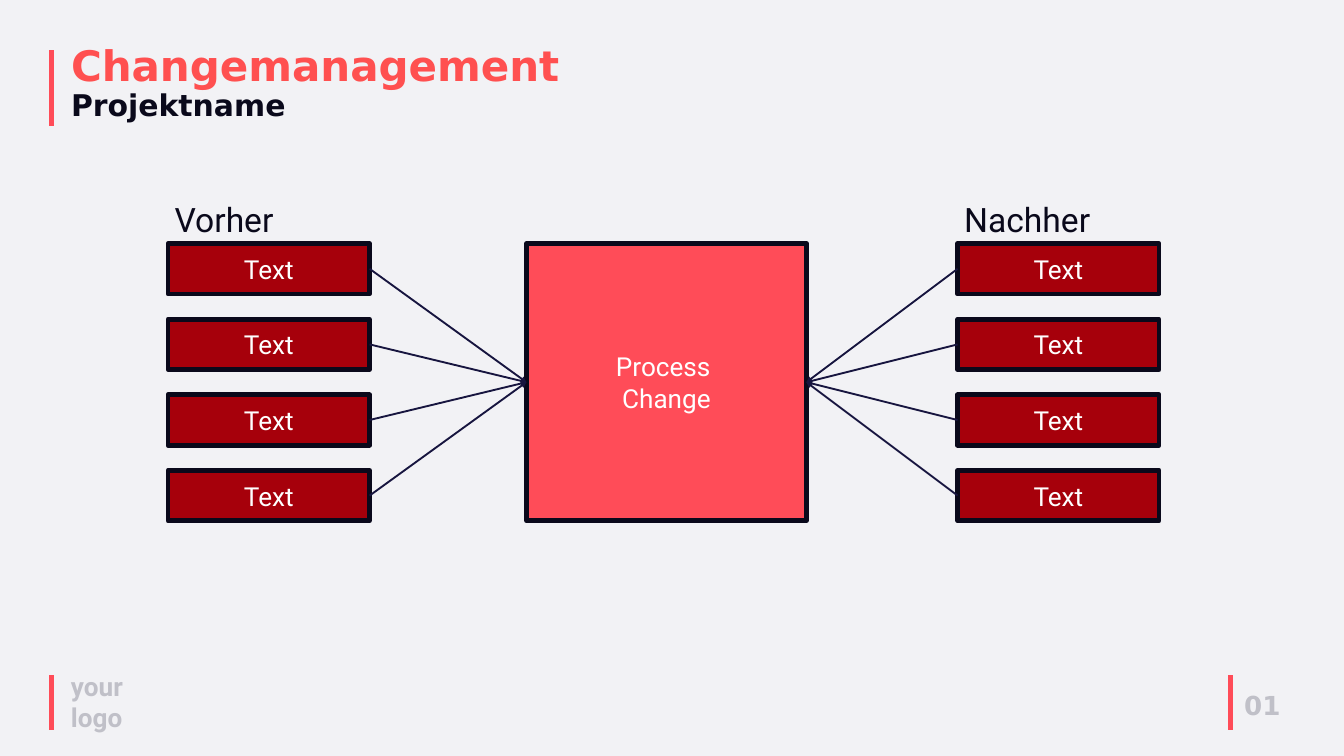
from lxml import etree
from pptx import Presentation
from pptx.dml.color import RGBColor
from pptx.enum.shapes import MSO_CONNECTOR, MSO_SHAPE
from pptx.enum.text import MSO_ANCHOR, MSO_AUTO_SIZE, PP_ALIGN
from pptx.oxml.ns import qn
from pptx.util import Pt

LINE = MSO_CONNECTOR.STRAIGHT
RECT = MSO_SHAPE.RECTANGLE
MIDDLE, TOP = MSO_ANCHOR.MIDDLE, MSO_ANCHOR.TOP
GROW, FIXED = MSO_AUTO_SIZE.SHAPE_TO_FIT_TEXT, MSO_AUTO_SIZE.NONE
LEFT, CENTER = PP_ALIGN.LEFT, PP_ALIGN.CENTER
PX = 9525


class Theme:
    back = RGBColor.from_string("F2F2F5")
    red = RGBColor.from_string("FF4C58")
    title = RGBColor.from_string("FF5050")
    dark = RGBColor.from_string("A6000B")
    ink = RGBColor.from_string("0A091B")
    navy = RGBColor.from_string("17153F")
    gray = RGBColor.from_string("C0C0C8")
    white = RGBColor.from_string("FFFFFF")
    body, wide = "Roboto", "DejaVu Sans"
    huge, large, mid, small = 45, 36, 32, 28
    thick, thin = 5, 2


deck = Presentation()
deck.slide_width, deck.slide_height = 1920 * PX, 1080 * PX
slide = deck.slides.add_slide(deck.slide_layouts[6])
slide.background.fill.solid()
slide.background.fill.fore_color.rgb = Theme.back
shapes = slide.shapes


def write(text, box, fill=None, size=Theme.small, color=Theme.ink,
          font=Theme.body, bold=False, space=None):
    place = [n * PX for n in box]
    if fill is None:
        shape = shapes.add_textbox(*place)
    else:
        shape = shapes.add_shape(RECT, *place)
        shape.shadow.inherit = False
        shape.fill.solid()
        shape.fill.fore_color.rgb = fill
        shape.line.color.rgb = Theme.ink
        shape.line.width = Pt(Theme.thick)
    frame = shape.text_frame
    frame.word_wrap = True
    frame.auto_size = FIXED if fill else GROW
    frame.vertical_anchor = MIDDLE if fill else TOP
    frame.text = text
    for para in frame.paragraphs:
        para.alignment = CENTER if fill else LEFT
        para.line_spacing = space
        for run in para.runs:
            run.font.name, run.font.size = font, Pt(size)
            run.font.bold, run.font.color.rgb = bold, color
    return frame


def draw(x1, y1, x2, y2, color, width, arrow=False):
    line = shapes.add_connector(LINE, x1 * PX, y1 * PX, x2 * PX, y2 * PX)
    line.line.color.rgb = color
    line.line.width = Pt(width)
    if arrow:
        etree.SubElement(line.line._get_or_add_ln(), qn("a:tailEnd"), type="triangle")
    etree.SubElement(line._element.spPr, qn("a:effectLst"))


for x, top, end in [(74, 72, 180), (74, 965, 1043), (1758, 965, 1043)]:
    draw(x, top, x, end, Theme.red, Theme.thick)

head = write("Changemanagement\vProjektname", (92, 60, 775, 122), size=Theme.huge,
             color=Theme.title, font=Theme.wide, bold=True, space=0.9)
name = head.paragraphs[0].runs[1].font
name.size, name.color.rgb = Pt(Theme.mid), Theme.ink

write("your logo", (92, 953, 114, 100), color=Theme.gray, bold=True)
write("01", (1768, 980, 182, 55), color=Theme.gray, font=Theme.wide, bold=True)

write("Process \nChange", (752, 348, 400, 396), fill=Theme.red, color=Theme.white)

for label, left, edge, hub in [("Vorher", 240, 528, 752), ("Nachher", 1368, 1368, 1152)]:
    write(label, (left, 280, 264, 68), size=Theme.large)
    for row in range(4):
        top = 348 + 108 * row
        write("Text", (left, top, 288, 72), fill=Theme.dark, color=Theme.white)
        draw(edge, top + 36, hub, 546, Theme.navy, Theme.thin, arrow=True)

deck.save("out.pptx")
